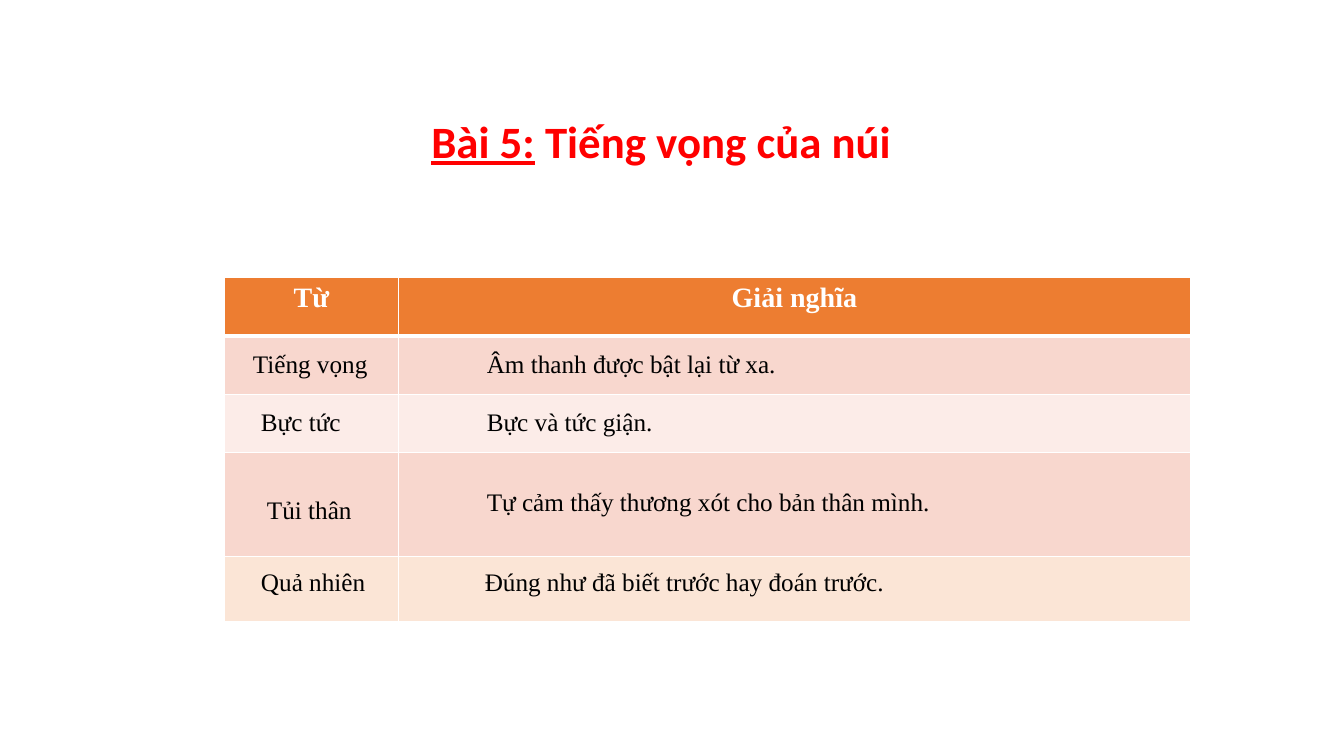
from lxml.etree import SubElement
from pptx import Presentation
from pptx.dml.color import RGBColor
from pptx.enum.text import PP_ALIGN
from pptx.oxml.ns import qn
from pptx.util import Inches, Pt

WIDTH, HEIGHT = 13.33, 7.5
TABLE_LEFT = 2.23
COLUMNS = (1.72, 7.86)
ORANGE, ROSE, PALE_ROSE, PEACH = "ED7D31", "F8D7CE", "FCECE8", "FBE5D6"


def write(frame, *runs, size=18, font="Times New Roman", color="000000",
          bold=False, align=PP_ALIGN.LEFT):
    """Fill the first paragraph with (text, underlined) runs."""
    paragraph = frame.paragraphs[0]
    paragraph.alignment = align
    for text, underlined in runs:
        run = paragraph.add_run()
        run.text = text
        run.font.size, run.font.name = Pt(size), font
        run.font.bold, run.font.underline = bold, underlined
        run.font.color.rgb = RGBColor.from_string(color)


def add_grid(top, rows, bottom_width):
    """Add a table from (height, fill) rows; the first row has its own bottom line."""
    grid = slide.shapes.add_table(
        len(rows), len(COLUMNS), Inches(TABLE_LEFT), Inches(top),
        Inches(sum(COLUMNS)), Inches(sum(height for height, _ in rows))).table
    for column, width in zip(grid.columns, COLUMNS):
        column.width = Inches(width)
    for index, (row, (height, color)) in enumerate(zip(grid.rows, rows)):
        row.height = Inches(height)
        for cell in row.cells:
            properties = cell._tc.get_or_add_tcPr()
            for side in "LRTB":
                wide = (side == "B" and index == 0) or (side == "T" and index == 1)
                line = SubElement(properties, qn(f"a:ln{side}"),
                                  w=str(Pt(bottom_width if wide else 1)))
                fill = SubElement(line, qn("a:solidFill"))
                SubElement(fill, qn("a:srgbClr"), val="FFFFFF")
            cell.fill.solid()
            cell.fill.fore_color.rgb = RGBColor.from_string(color)
    return grid


deck = Presentation()
deck.slide_width, deck.slide_height = Inches(WIDTH), Inches(HEIGHT)
slide = deck.slides.add_slide(deck.slide_layouts[6])

add_grid(5.5, [(0.68, PEACH)], 3)
glossary = add_grid(
    2.75, [(0.58, ORANGE), (0.58, ROSE), (0.58, PALE_ROSE), (1.03, ROSE)], 3)
for column, heading in enumerate(("Từ", "Giải nghĩa")):
    write(glossary.cell(0, column).text_frame, (heading, False), size=20,
          color="FFFFFF", bold=True, align=PP_ALIGN.CENTER)

# Text, left, top, width
entries = [
    ("Âm thanh được bật lại từ xa.", 4.73, 3.41, 3.76),
    ("Bực và tức giận.", 4.73, 3.98, 2.54),
    ("Tự cảm thấy thương xót cho bản thân mình.", 4.73, 4.78, 4.73),
    ("Tiếng vọng", 2.41, 3.41, 1.54),
    ("Bực tức", 2.49, 3.98, 1.47),
    ("Tủi thân", 2.55, 4.85, 1.27),
    ("Quả nhiên", 2.49, 5.57, 1.69),
    ("Đúng như đã biết trước hay đoán trước.", 4.71, 5.57, 4.6),
]
for text, left, top, width in entries:
    entry = slide.shapes.add_textbox(
        Inches(left), Inches(top), Inches(width), Inches(0.4)).text_frame
    entry.word_wrap = True
    write(entry, (text, False))

title = slide.shapes.add_textbox(
    Inches(4.18), Inches(1.08), Inches(7.38), Inches(0.64)).text_frame
title.word_wrap = True
write(title, ("Bài 5:", True), (" Tiếng vọng của núi", False),
      size=32, font="Calibri", color="FF0000", bold=True)

deck.save("out.pptx")
